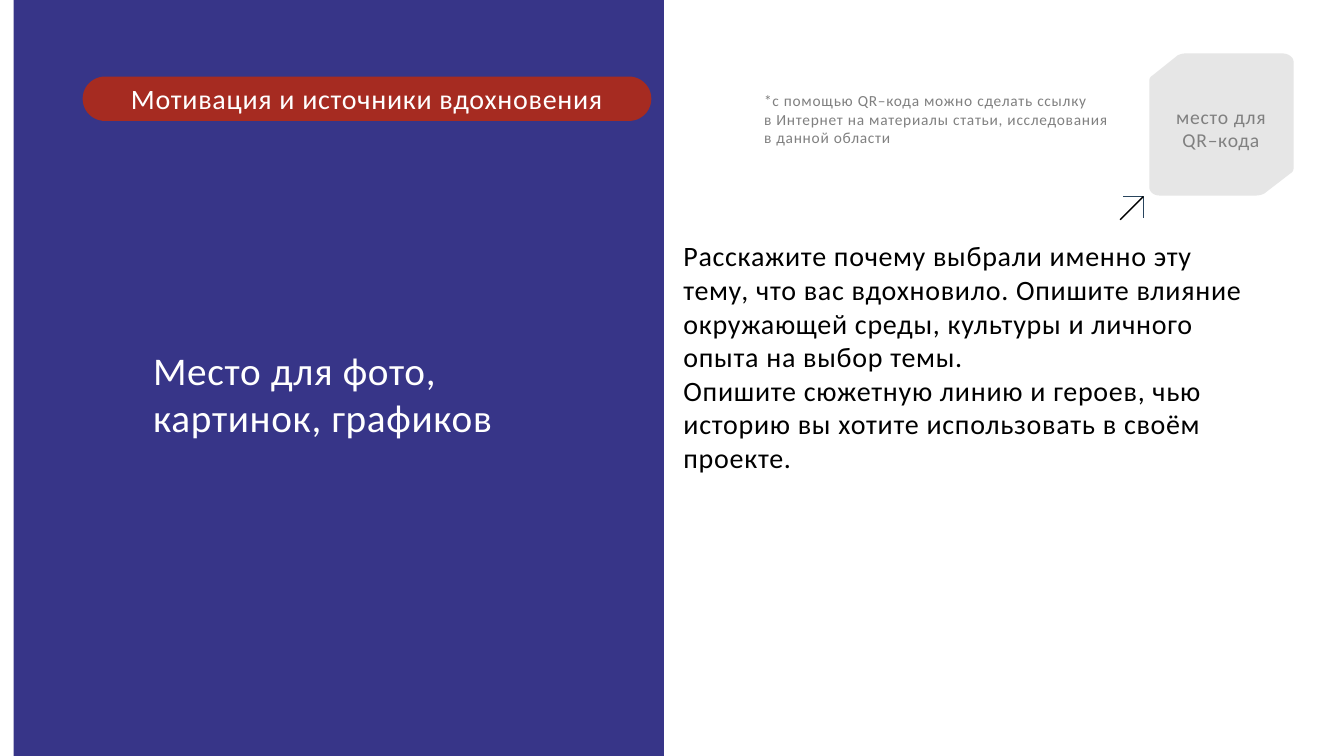
from lxml import etree
from pptx import Presentation
from pptx.dml.color import RGBColor
from pptx.enum.shapes import MSO_CONNECTOR as Connector, MSO_SHAPE as Preset
from pptx.enum.text import MSO_ANCHOR as Anchor, MSO_AUTO_SIZE as AutoSize, PP_ALIGN as Align
from pptx.oxml.ns import qn
from pptx.util import Inches, Pt

FONT = "Calibri"
LETTER_SPACING = "50"
CURVE_STEPS = 8

BLUE = RGBColor(0x37, 0x35, 0x88)
RED = RGBColor(0xA6, 0x2B, 0x21)
SLATE = RGBColor(0x28, 0x44, 0x5D)
LIGHT_GRAY = RGBColor(0xE6, 0xE6, 0xE6)
GRAY = RGBColor(0x80, 0x80, 0x80)
BLACK = RGBColor(0, 0, 0)
WHITE = RGBColor(0xFF, 0xFF, 0xFF)

QR_CORNERS = [
    [(12.83, 1.67), (12.83, 1.69), (12.82, 1.71), (12.8, 1.72)],
    [(12.54, 1.92), (12.52, 1.93), (12.49, 1.94), (12.46, 1.94)],
    [(11.5, 1.94), (11.44, 1.94), (11.4, 1.9), (11.4, 1.86)],
    [(11.4, 0.8), (11.4, 0.78), (11.41, 0.76), (11.43, 0.75)],
    [(11.68, 0.55), (11.7, 0.54), (11.73, 0.53), (11.76, 0.53)],
    [(12.72, 0.53), (12.78, 0.53), (12.83, 0.57), (12.83, 0.61)],
]


def write_text(shape, text, *, size, color, align=Align.LEFT, anchor=Anchor.TOP):
    frame = shape.text_frame
    frame.word_wrap = True
    frame.vertical_anchor = anchor
    for index, line in enumerate(text.split("\n")):
        para = frame.add_paragraph() if index else frame.paragraphs[0]
        para.alignment = align
        span = para.add_run()
        span.text = line
        span.font.name = FONT
        span.font.size = Pt(size)
        span.font.color.rgb = color
        span._r.get_or_add_rPr().set("spc", LETTER_SPACING)


def add_text(page, text, left, top, width, height, **text_format):
    box = page.shapes.add_textbox(Inches(left), Inches(top), Inches(width), Inches(height))
    write_text(box, text, **text_format)
    box.text_frame.auto_size = AutoSize.SHAPE_TO_FIT_TEXT


def paint(shape, color):
    shape.shadow.inherit = False
    shape.fill.solid()
    shape.fill.fore_color.rgb = color
    shape.line.fill.background()


def add_rounded(page, left, top, width, height, *, rounding, color):
    panel = page.shapes.add_shape(
        Preset.ROUNDED_RECTANGLE, Inches(left), Inches(top), Inches(width), Inches(height)
    )
    panel.adjustments[0] = rounding
    paint(panel, color)
    return panel


def curve_points(corner):
    for step in range(CURVE_STEPS + 1):
        t = step / CURVE_STEPS
        weights = ((1 - t) ** 3, 3 * t * (1 - t) ** 2, 3 * t**2 * (1 - t), t**3)
        yield tuple(sum(w * point[axis] for w, point in zip(weights, corner)) for axis in (0, 1))


def add_outline(shapes, points, *, close):
    start, *rest = [(Inches(x), Inches(y)) for x, y in points]
    builder = shapes.build_freeform(*start)
    builder.add_line_segments(rest, close=close)
    return builder.convert_to_shape()


def add_qr_place(page):
    points = [point for corner in QR_CORNERS for point in curve_points(corner)]
    paint(add_outline(page.shapes, points, close=True), LIGHT_GRAY)
    add_text(page, "место для\nQR–кода", 11.29, 0.99, 1.64, 0.57,
             size=14, color=GRAY, align=Align.CENTER)


def add_corner_arrow(page):
    arrow = page.shapes.add_group_shape()
    head = add_outline(arrow.shapes, [(11.14, 1.95), (11.34, 1.95), (11.34, 2.16)], close=False)
    head.shadow.inherit = False
    head.fill.background()
    head.line.color.rgb = SLATE
    head.line.width = Pt(1)
    shaft = arrow.shapes.add_connector(
        Connector.STRAIGHT, Inches(11.11), Inches(2.18), Inches(11.34), Inches(1.95)
    )
    shaft.line.color.rgb = BLACK
    shaft.line.width = Pt(1)
    etree.SubElement(shaft._element.spPr, qn("a:effectLst"))


def main():
    deck = Presentation()
    deck.slide_width = Inches(13.33)
    deck.slide_height = Inches(7.5)
    page = deck.slides.add_slide(deck.slide_layouts[6])

    photo_panel = add_rounded(page, -1.32, 0.54, 9.36, 6.45, rounding=0.092, color=BLUE)
    photo_panel.rotation = 90
    add_text(
        page,
        "Расскажите почему выбрали именно эту тему, что вас вдохновило. "
        "Опишите влияние окружающей среды, культуры и личного опыта на выбор темы.\n"
        "Опишите сюжетную линию и героев, чью историю вы хотите использовать в своём проекте.",
        6.68, 2.32, 5.95, 2.46, size=20, color=BLACK,
    )
    add_text(
        page,
        "*с помощью QR–кода можно сделать ссылку\n"
        "в Интернет на материалы статьи, исследования\n"
        "в данной области",
        7.48, 0.86, 3.8, 0.66, size=11, color=GRAY,
    )
    add_qr_place(page)
    title = add_rounded(page, 0.82, 0.76, 5.64, 0.44, rounding=0.5, color=RED)
    write_text(title, "Мотивация и источники вдохновения",
               size=20, color=WHITE, align=Align.CENTER, anchor=Anchor.MIDDLE)
    add_corner_arrow(page)
    add_text(page, "Место для фото, картинок, графиков", 1.42, 3.39, 3.66, 1.04,
             size=28, color=WHITE)

    deck.save("out.pptx")


if __name__ == "__main__":
    main()
